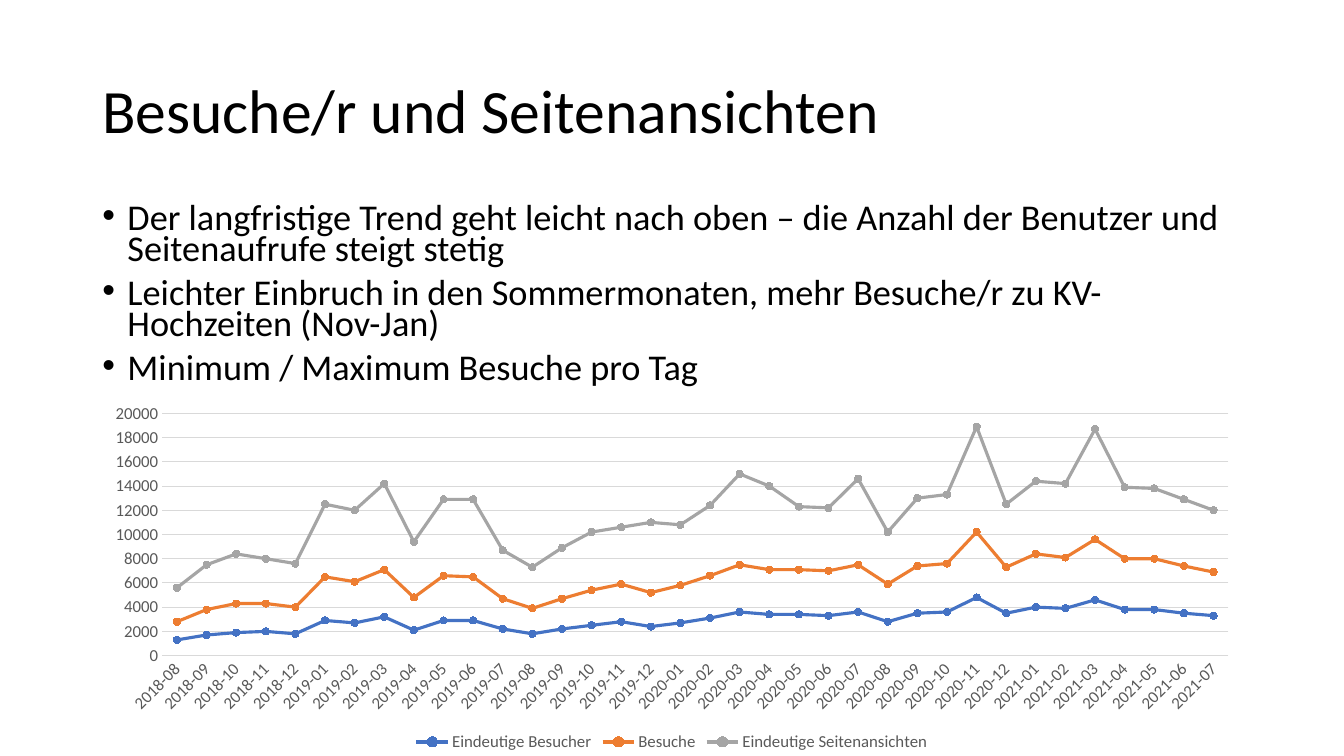
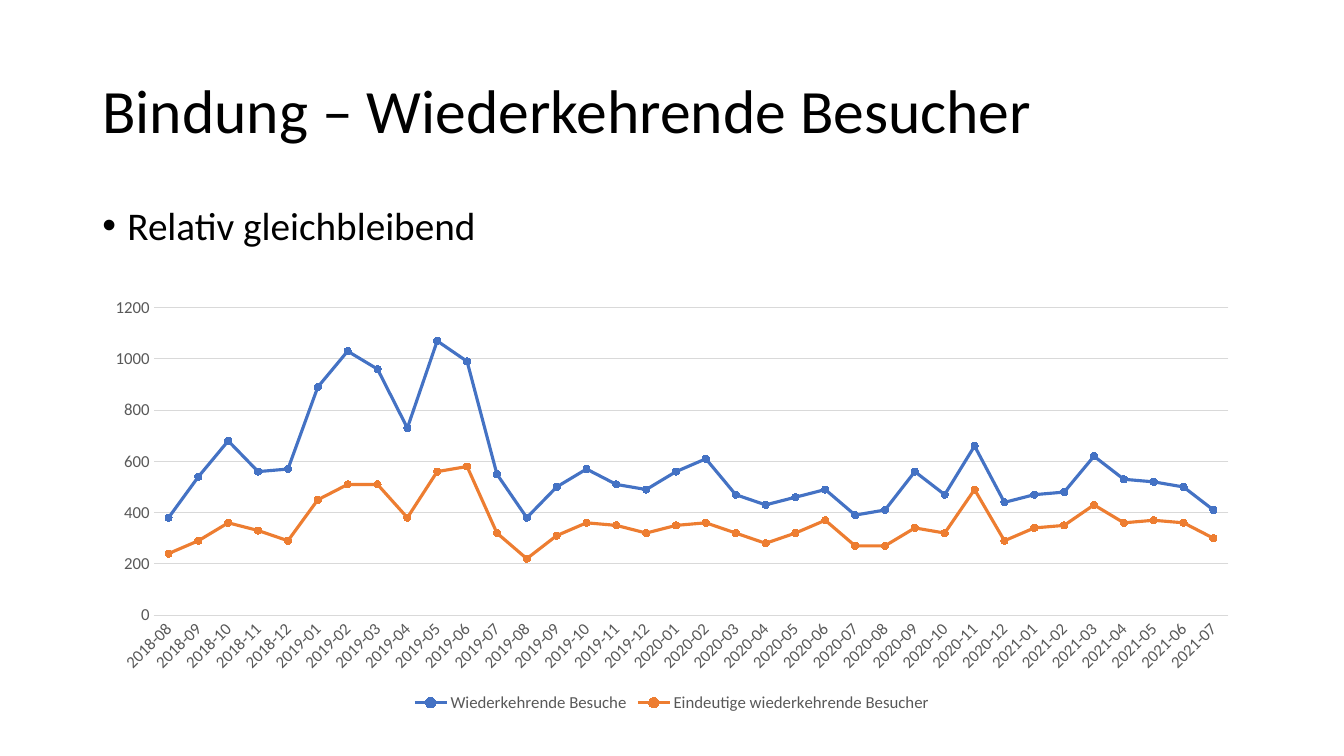
from dataclasses import dataclass

from lxml import etree
from pptx import Presentation
from pptx.chart.data import CategoryChartData
from pptx.dml.color import RGBColor
from pptx.enum.chart import (XL_CHART_TYPE, XL_LEGEND_POSITION,
                             XL_MARKER_STYLE, XL_TICK_MARK)
from pptx.enum.text import MSO_ANCHOR
from pptx.oxml.ns import qn
from pptx.util import Pt

LINE = XL_CHART_TYPE.LINE_MARKERS
STACKED = XL_CHART_TYPE.LINE_MARKERS_STACKED
BOTTOM = XL_LEGEND_POSITION.BOTTOM
CIRCLE = XL_MARKER_STYLE.CIRCLE
NO_TICK = XL_TICK_MARK.NONE
TOP, MIDDLE = MSO_ANCHOR.TOP, MSO_ANCHOR.MIDDLE


@dataclass(frozen=True)
class Theme:
    font: str = "Calibri"
    ink: RGBColor = RGBColor(0, 0, 0)
    label: RGBColor = RGBColor(0x59, 0x59, 0x59)
    grid: RGBColor = RGBColor(0xD9, 0xD9, 0xD9)
    accents: tuple = (RGBColor(0x44, 0x72, 0xC4), RGBColor(0xED, 0x7D, 0x31),
                      RGBColor(0xA5, 0xA5, 0xA5))
    title_size: float = 44
    label_size: float = 12


THEME = Theme()
WIDTH, HEIGHT = 960, 540
LEFT, SPAN = 66, 828
TITLE_TOP, TITLE_HIGH = 28.75, 104.4
BODY_TOP = 143.75
INDENT = 18

# August 2018 to July 2021
MONTHS = [f"{n // 12}-{n % 12 + 1:02}"
          for n in range(2018 * 12 + 7, 2021 * 12 + 7)]

SLIDES = [
    {
        "title": "Besuche/r und Seitenansichten",
        "points": [
            "Der langfristige Trend geht leicht nach oben – die Anzahl der "
            "Benutzer und Seitenaufrufe steigt stetig",
            "Leichter Einbruch in den Sommermonaten, mehr Besuche/r zu "
            "KV-Hochzeiten (Nov-Jan)",
            "Minimum / Maximum Besuche pro Tag",
        ],
        "size": 25.9, "spacing": 0.7, "body_high": 139.5,
        "kind": STACKED, "chart_top": 283, "chart_high": 257,
        "top_value": 20000, "step": 2000,
        "series": {
            "Eindeutige Besucher": [
                1300, 1700, 1900, 2000, 1800, 2900, 2700, 3200, 2100,
                2900, 2900, 2200, 1800, 2200, 2500, 2800, 2400, 2700,
                3100, 3600, 3400, 3400, 3300, 3600, 2800, 3500, 3600,
                4800, 3500, 4000, 3900, 4600, 3800, 3800, 3500, 3300],
            "Besuche": [
                1500, 2100, 2400, 2300, 2200, 3600, 3400, 3900, 2700,
                3700, 3600, 2500, 2100, 2500, 2900, 3100, 2800, 3100,
                3500, 3900, 3700, 3700, 3700, 3900, 3100, 3900, 4000,
                5400, 3800, 4400, 4200, 5000, 4200, 4200, 3900, 3600],
            "Eindeutige Seitenansichten": [
                2800, 3700, 4100, 3700, 3600, 6000, 5900, 7100, 4600,
                6300, 6400, 4000, 3400, 4200, 4800, 4700, 5800, 5000,
                5800, 7500, 6900, 5200, 5200, 7100, 4300, 5600, 5700,
                8700, 5200, 6000, 6100, 9100, 5900, 5800, 5500, 5100],
        },
    },
    {
        "title": "Bindung – Wiederkehrende Besucher",
        "points": ["Relativ gleichbleibend"],
        "size": 28, "spacing": 0.9, "body_high": 85.5,
        "kind": LINE, "chart_top": 206.5, "chart_high": 305.5,
        "top_value": 1200, "step": 200,
        "series": {
            "Wiederkehrende Besuche": [
                380, 540, 680, 560, 570, 890, 1030, 960, 730,
                1070, 990, 550, 380, 500, 570, 510, 490, 560,
                610, 470, 430, 460, 490, 390, 410, 560, 470,
                660, 440, 470, 480, 620, 530, 520, 500, 410],
            "Eindeutige wiederkehrende Besucher": [
                240, 290, 360, 330, 290, 450, 510, 510, 380,
                560, 580, 320, 220, 310, 360, 350, 320, 350,
                360, 320, 280, 320, 370, 270, 270, 340, 320,
                490, 290, 340, 350, 430, 360, 370, 360, 300],
        },
    },
]


def style(font, size, color):
    font.name = THEME.font
    font.size = Pt(size)
    font.color.rgb = color


def add_text(slide, top, high, lines, size, spacing, anchor):
    """Add a text box over the content width and return its paragraphs."""
    box = slide.shapes.add_textbox(Pt(LEFT), Pt(top), Pt(SPAN), Pt(high))
    frame = box.text_frame
    frame.word_wrap = True
    frame.vertical_anchor = anchor
    for i, line in enumerate(lines):
        para = frame.add_paragraph() if i else frame.paragraphs[0]
        para.line_spacing = spacing
        run = para.add_run()
        run.text = line
        style(run.font, size, THEME.ink)
    return frame.paragraphs


def add_bullet(para):
    para.space_before = Pt(10)
    props = para._p.get_or_add_pPr()
    props.set("marL", str(Pt(INDENT)))
    props.set("indent", str(-Pt(INDENT)))
    etree.SubElement(props, qn("a:buFont")).set("typeface", "Arial")
    etree.SubElement(props, qn("a:buChar")).set("char", "•")


def style_axes(chart, top_value, step):
    months, values = chart.category_axis, chart.value_axis
    for axis in (months, values):
        axis.major_tick_mark = axis.minor_tick_mark = NO_TICK
        style(axis.tick_labels.font, THEME.label_size, THEME.label)
    months.has_major_gridlines = False
    values.has_major_gridlines = True
    for line in (months.format.line, values.major_gridlines.format.line):
        line.color.rgb = THEME.grid
        line.width = Pt(0.75)
    values.format.line.fill.background()
    values.minimum_scale, values.maximum_scale = 0, top_value
    values.major_unit = step
    tilt = months._element.find(qn("c:txPr")).find(qn("a:bodyPr"))
    tilt.set("rot", str(-45 * 60000))


def style_series(series, color):
    series.smooth = False
    series.format.line.color.rgb = color
    series.format.line.width = Pt(2.25)
    mark = series.marker
    mark.style, mark.size = CIRCLE, 5
    mark.format.fill.solid()
    mark.format.fill.fore_color.rgb = color
    mark.format.line.color.rgb = color


def add_chart(slide, page):
    data = CategoryChartData(number_format="General")
    data.categories = MONTHS
    for name, values in page["series"].items():
        data.add_series(name, values)
    chart = slide.shapes.add_chart(
        page["kind"], Pt(LEFT), Pt(page["chart_top"]), Pt(SPAN),
        Pt(page["chart_high"]), data).chart
    style(chart.font, 10, THEME.ink)
    chart.has_title = False
    chart.has_legend = True
    chart.legend.position = BOTTOM
    chart.legend.include_in_layout = False
    style(chart.legend.font, THEME.label_size, THEME.label)
    style_axes(chart, page["top_value"], page["step"])
    plot = chart.plots[0]
    plot.vary_by_categories = False
    for series, color in zip(plot.series, THEME.accents):
        style_series(series, color)


def main():
    deck = Presentation()
    deck.slide_width, deck.slide_height = Pt(WIDTH), Pt(HEIGHT)
    blank = deck.slide_layouts[6]
    for page in SLIDES:
        slide = deck.slides.add_slide(blank)
        add_text(slide, TITLE_TOP, TITLE_HIGH, [page["title"]],
                 THEME.title_size, 0.9, MIDDLE)
        add_chart(slide, page)
        for para in add_text(slide, BODY_TOP, page["body_high"],
                             page["points"], page["size"],
                             page["spacing"], TOP):
            add_bullet(para)
    deck.save("out.pptx")


if __name__ == "__main__":
    main()
